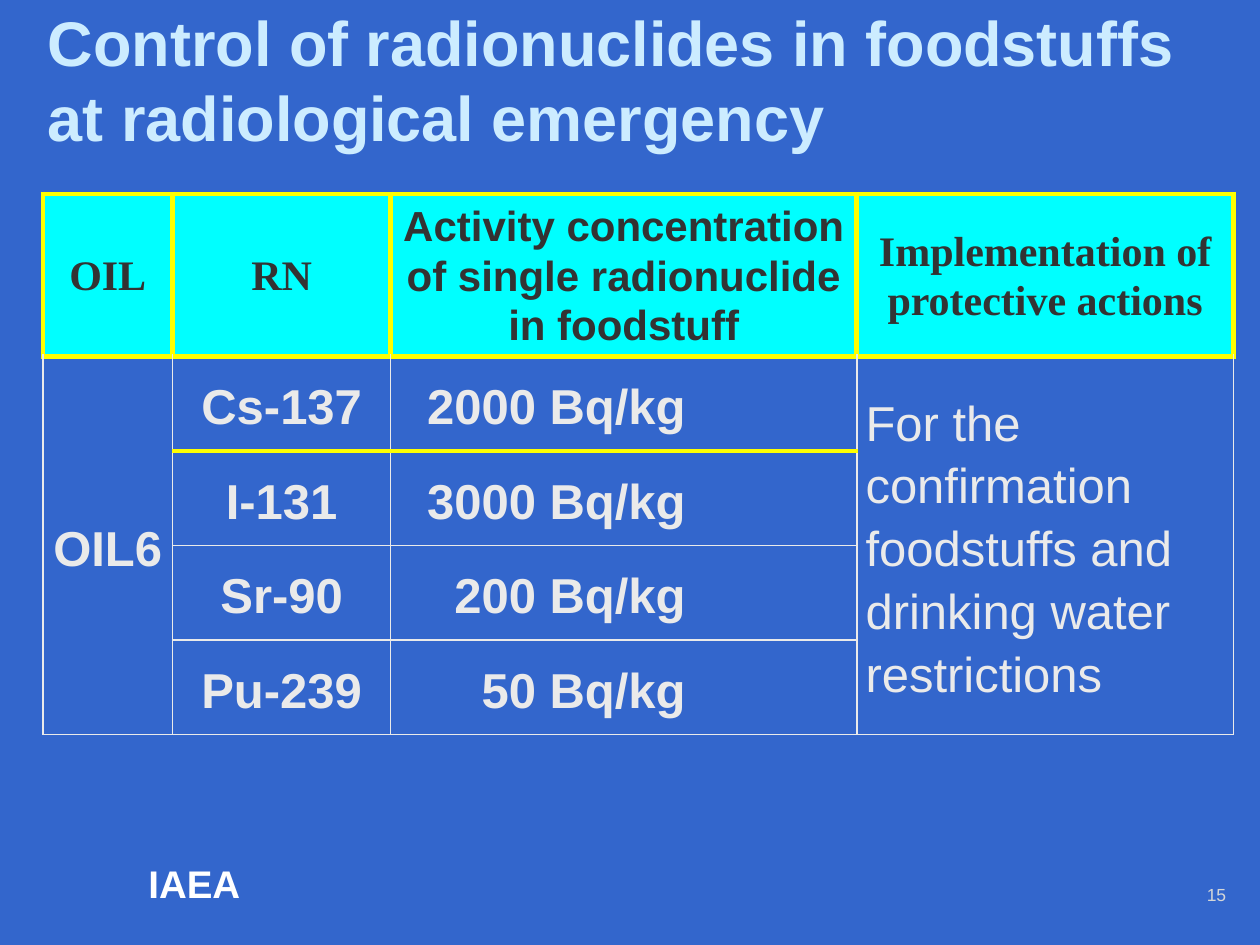
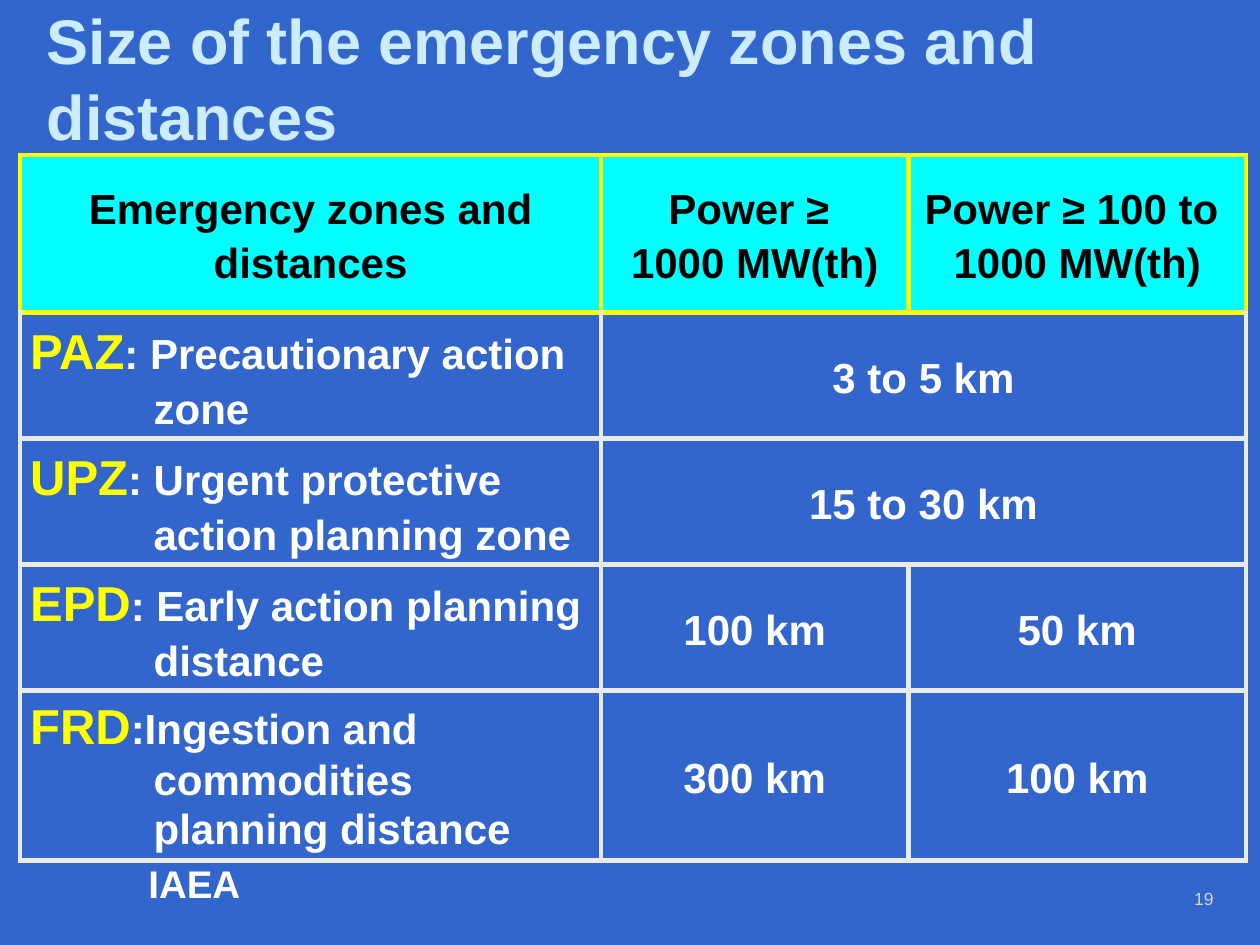
from pptx import Presentation
from pptx.dml.color import RGBColor
from pptx.enum.text import MSO_ANCHOR as Anchor, MSO_AUTO_SIZE as AutoSize, PP_ALIGN as Align
from pptx.oxml.ns import qn
from pptx.util import Inches, Pt
from lxml.etree import SubElement

BLUE = RGBColor(0x33, 0x66, 0xCC)
ICE = RGBColor(0xCC, 0xEC, 0xFF)
CYAN = RGBColor(0x00, 0xFF, 0xFF)
YELLOW = RGBColor(0xFF, 0xFF, 0x00)
WHITE = RGBColor(0xFF, 0xFF, 0xFF)
BLACK = RGBColor(0x00, 0x00, 0x00)
CHARCOAL = RGBColor(0x33, 0x33, 0x33)
PALE = RGBColor(0xEA, 0xEA, 0xEA)
SILVER = RGBColor(0xD5, 0xD7, 0xD8)

SANS = "Arial"
SERIF = "Times New Roman"
CELL_SPACING = 1.15
TIGHT_SPACING = 1.05


def write(frame, text, size=24, color=WHITE, font=SANS, bold=True,
          align=Align.LEFT, spacing=None, hanging=0, lead="", lead_size=28):
    frame.word_wrap = True
    para = frame.paragraphs[0]
    para.alignment = align
    if spacing:
        para.line_spacing = spacing
    if hanging:
        properties = para._p.get_or_add_pPr()
        properties.set("marL", str(Inches(hanging)))
        properties.set("indent", str(-Inches(hanging)))
    pieces = [(lead, lead_size, YELLOW)] if lead else []
    pieces += [(line, size, color) for line in text.split("\n")]
    for index, (piece, points, tint) in enumerate(pieces):
        if index > (1 if lead else 0):
            para.add_line_break()
        span = para.add_run()
        span.text = piece
        span.font.name = font
        span.font.size = Pt(points)
        span.font.bold = bold
        span.font.color.rgb = tint


def add_label(page, place, text, **style):
    box = page.shapes.add_textbox(*map(Inches, place))
    write(box.text_frame, text, **style)


def add_page(deck, title, title_place, number, number_place):
    page = deck.slides.add_slide(deck.slide_layouts[5])
    add_label(page, (1.08, 6.78, 1, 0.47), "IAEA", size=22)
    heading = page.shapes.title
    heading.left, heading.top, heading.width, heading.height = map(Inches, title_place)
    frame = heading.text_frame
    frame.auto_size = AutoSize.NONE
    frame.vertical_anchor = Anchor.MIDDLE
    write(frame, title, size=36, color=ICE)
    add_label(page, (*number_place, 0.56, 0.32), number,
              size=10, color=SILVER, bold=False, align=Align.RIGHT)
    return page


def set_borders(cell, **sides):
    properties = cell._tc.get_or_add_tcPr()
    for side in "LRTB":
        color, points = sides[side]
        line = SubElement(properties, qn(f"a:ln{side}"), w=str(Pt(points)))
        fill = SubElement(line, qn("a:solidFill"))
        SubElement(fill, qn("a:srgbClr"), val=str(color))


def add_grid(page, place, widths, heights, margin, body_line, yellow_rules):
    frame = page.shapes.add_table(len(heights), len(widths), Inches(place[0]), Inches(place[1]),
                                  Inches(sum(widths)), Inches(sum(heights)))
    table = frame.table
    table.first_row = table.horz_banding = False
    for column, width in zip(table.columns, widths):
        column.width = Inches(width)
    for row, height in zip(table.rows, heights):
        row.height = Inches(height)
    header_line = (YELLOW, 3)
    for r in range(len(heights)):
        for c in range(len(widths)):
            cell = table.cell(r, c)
            side = header_line if r == 0 else body_line
            top = header_line if r == 0 or (r, c) in yellow_rules else body_line
            bottom = header_line if (r + 1, c) in yellow_rules else body_line
            set_borders(cell, L=side, R=side, T=top, B=bottom)
            if r == 0:
                cell.fill.solid()
                cell.fill.fore_color.rgb = CYAN
            else:
                cell.fill.background()
            cell.margin_left = cell.margin_right = Inches(margin)
            cell.margin_top = cell.margin_bottom = 0
            cell.vertical_anchor = Anchor.MIDDLE
    return table


def fill_cell(table, row, column, text, align=Align.CENTER, spacing=CELL_SPACING, **style):
    write(table.cell(row, column).text_frame, text, align=align, spacing=spacing, **style)


def add_foodstuff_page(deck):
    page = add_page(deck, "Control of radionuclides in foodstuffs at radiological emergency",
                    (0.28, 0.21, 9.33, 0.83), "15", (9.27, 6.97))
    rules = {(1, column) for column in range(4)} | {(2, 1), (2, 2)}
    table = add_grid(page, (0.34, 1.54), (1.03, 1.73, 3.7, 2.99), (1.29,) + (0.75,) * 4,
                     0.07, (PALE, 1), rules)
    headers = [("OIL", SERIF), ("RN", SERIF),
               ("Activity concentration of single radionuclide in foodstuff", SANS),
               ("Implementation of protective actions", SERIF)]
    for column, (text, font) in enumerate(headers):
        fill_cell(table, 0, column, text, color=CHARCOAL, font=font, spacing=TIGHT_SPACING)

    for column in (0, 3):
        table.cell(1, column).merge(table.cell(4, column))
    body = {"size": 28, "color": PALE}
    fill_cell(table, 1, 0, "OIL6", **body)
    fill_cell(table, 1, 3, "For the confirmation foodstuffs and drinking water restrictions",
              align=Align.LEFT, bold=False, **body)
    limits = [("Cs-137", 2000), ("I-131", 3000), ("Sr-90", 200), ("Pu-239", 50)]
    for row, (nuclide, activity) in enumerate(limits, start=1):
        fill_cell(table, row, 1, nuclide, **body)
        table.cell(row, 2).margin_right = Inches(1.36)
        fill_cell(table, row, 2, f"{activity} Bq/kg", align=Align.RIGHT, **body)


def add_zones_page(deck):
    page = add_page(deck, "Size of the emergency zones and distances",
                    (0.27, 0.13, 9.33, 0.97), "19", (9.17, 7))
    rules = {(1, column) for column in range(3)}
    table = add_grid(page, (0.16, 1.23), (4.61, 2.44, 2.68), (1.25, 1, 1, 1, 1.35),
                     0.08, (PALE, 3), rules)
    headers = ["Emergency zones and distances", "Power ≥ \n1000 MW(th)",
               "Power ≥ 100 to \n1000 MW(th)"]
    for column, text in enumerate(headers):
        fill_cell(table, 0, column, text, color=BLACK)

    zones = [("PAZ", ": Precautionary action zone", CELL_SPACING, ["3 to 5 km"]),
             ("UPZ", ": Urgent protective action planning zone", CELL_SPACING, ["15 to 30 km"]),
             ("EPD", ": Early action planning distance", CELL_SPACING, ["100 km", "50 km"]),
             ("FRD", ":Ingestion and commodities planning distance", TIGHT_SPACING,
              ["300 km", "100 km"])]
    for row, (code, meaning, spacing, distances) in enumerate(zones, start=1):
        fill_cell(table, row, 0, meaning, align=Align.LEFT, spacing=spacing,
                  hanging=0.98, lead=code)
        if len(distances) == 1:
            table.cell(row, 1).merge(table.cell(row, 2))
        for column, distance in enumerate(distances, start=1):
            fill_cell(table, row, column, distance)


def main():
    deck = Presentation()
    deck.slide_width, deck.slide_height = Inches(10), Inches(7.5)
    background = deck.slide_master.background.fill
    background.solid()
    background.fore_color.rgb = BLUE
    add_foodstuff_page(deck)
    add_zones_page(deck)
    deck.save("out.pptx")


if __name__ == "__main__":
    main()
